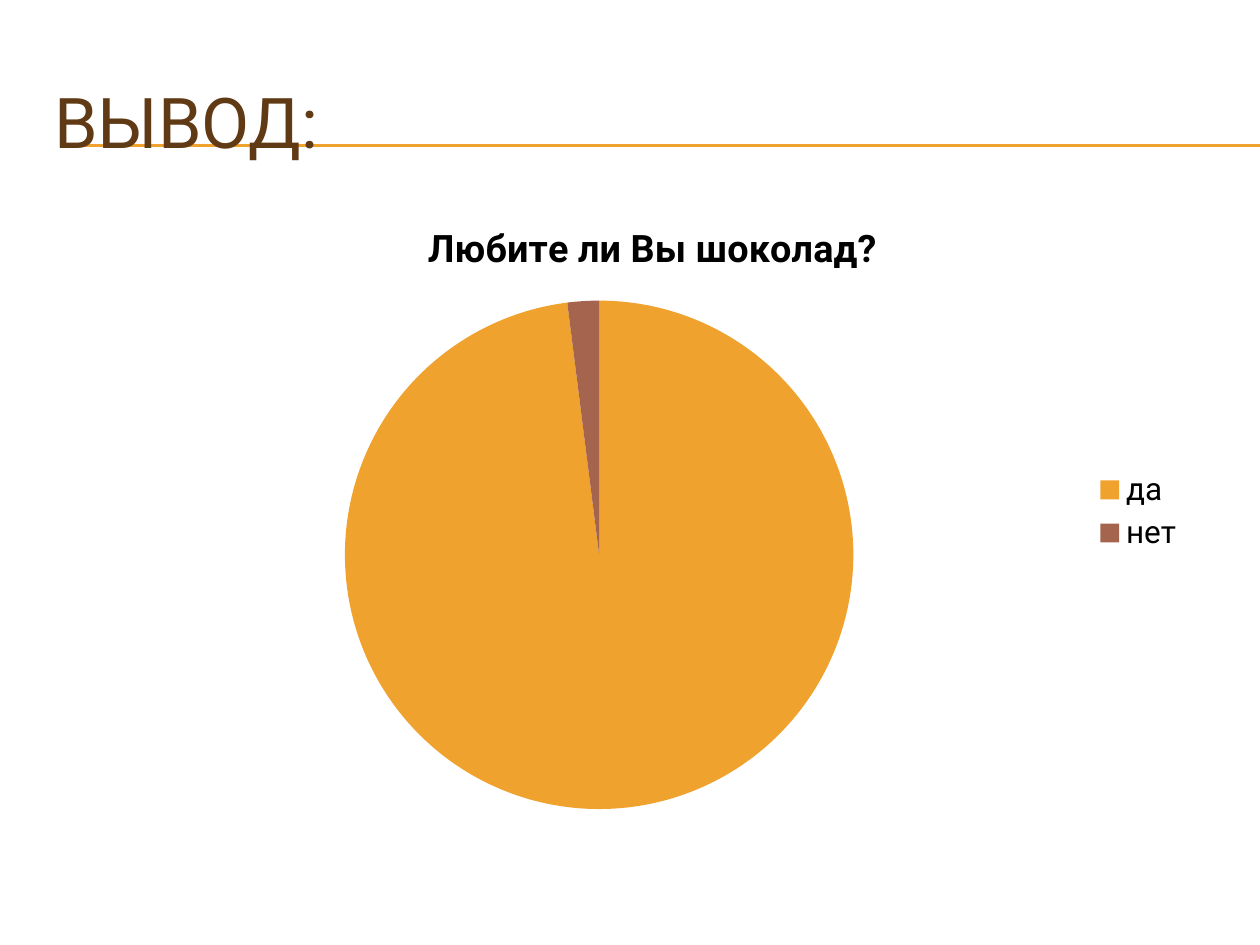
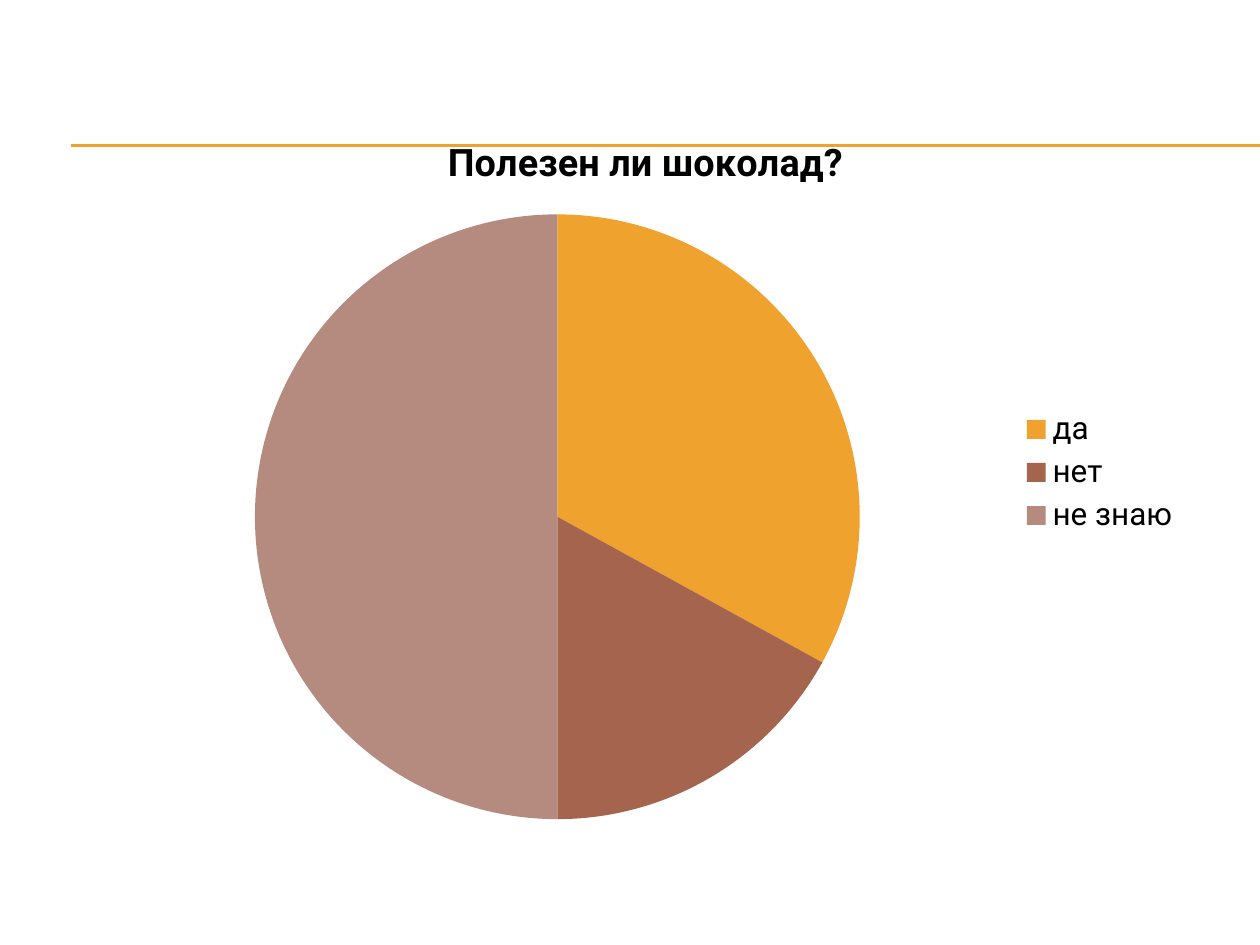
from lxml import etree
from pptx import Presentation
from pptx import util as u
from pptx.chart import data as chart_data
from pptx.dml.color import RGBColor
from pptx.enum import chart as charts, shapes, text
from pptx.oxml import ns

FONT = "Roboto"
BLACK = RGBColor(0x00, 0x00, 0x00)
BROWN = RGBColor(0x60, 0x3A, 0x14)
ORANGE = RGBColor(0xF0, 0xA2, 0x2E)
RUST = RGBColor(0xA5, 0x64, 0x4E)
ROSE = RGBColor(0xB5, 0x8B, 0x80)
SLICE_COLORS = (ORANGE, RUST, ROSE)
TITLE_ONLY, BLANK = 5, 6
RULE_LEFT, RULE_TOPS = 0.56, (1.15, 1.16)
SLIDE_WIDTH, SLIDE_HEIGHT = 10, 7.5


def style_font(font, size, color, bold=False):
    font.name = FONT
    font.size = u.Pt(size)
    font.bold = bold
    font.color.rgb = color


def add_header_rules(slide):
    for top in RULE_TOPS:
        rule = slide.shapes.add_connector(
            shapes.MSO_CONNECTOR.STRAIGHT,
            u.Inches(RULE_LEFT), u.Inches(top), u.Inches(SLIDE_WIDTH), u.Inches(top))
        rule.line.color.rgb = ORANGE
        rule.line.width = u.Pt(0.75)
        etree.SubElement(rule._element.spPr, ns.qn("a:effectLst"))
        if slide.shapes.title is not None:
            slide.shapes.title._element.addprevious(rule._element)


def format_title(slide, wording, box):
    title = slide.shapes.title
    title.left, title.top, title.width, title.height = map(u.Inches, box)
    frame = title.text_frame
    frame.auto_size = text.MSO_AUTO_SIZE.NONE
    frame.vertical_anchor = text.MSO_ANCHOR.MIDDLE
    paragraph = frame.paragraphs[0]
    paragraph.alignment = text.PP_ALIGN.LEFT
    run = paragraph.add_run()
    run.text = wording
    style_font(run.font, 40, BROWN)


def add_survey_pie(slide, question, answers, box):
    survey = chart_data.CategoryChartData()
    survey.categories = list(answers)
    survey.add_series(question, list(answers.values()))
    chart = slide.shapes.add_chart(
        charts.XL_CHART_TYPE.PIE, *map(u.Inches, box), survey).chart
    style_font(chart.font, 18, BLACK)

    chart.has_title = True
    run = chart.chart_title.text_frame.paragraphs[0].add_run()
    run.text = question
    style_font(run.font, 21.6, BLACK, bold=True)
    chart.chart_title.include_in_layout = False

    chart.has_legend = True
    chart.legend.position = charts.XL_LEGEND_POSITION.RIGHT
    chart.legend.include_in_layout = False

    plot = chart.plots[0]
    plot.vary_by_categories = True
    for index, color in enumerate(SLICE_COLORS[:len(answers)]):
        fill = plot.series[0].points[index].format.fill
        fill.solid()
        fill.fore_color.rgb = color


def add_survey_slide(presentation, question, answers, chart_box, heading=None):
    layout = presentation.slide_layouts[TITLE_ONLY if heading else BLANK]
    slide = presentation.slides.add_slide(layout)
    add_header_rules(slide)
    if heading:
        format_title(slide, heading, (0.33, 0.5, 9.5, 0.92))
    add_survey_pie(slide, question, answers, chart_box)


def main():
    presentation = Presentation()
    presentation.slide_width = u.Inches(SLIDE_WIDTH)
    presentation.slide_height = u.Inches(SLIDE_HEIGHT)
    add_survey_slide(presentation, "Любите ли Вы шоколад?", {"да": 98, "нет": 2},
                     (0.86, 1.56, 8.64, 5), heading="ВЫВОД:")
    add_survey_slide(presentation, "Полезен ли шоколад?",
                     {"да": 33, "нет": 17, "не знаю": 50}, (0.78, 0.86, 8.69, 5.78))
    presentation.save("out.pptx")


if __name__ == "__main__":
    main()
